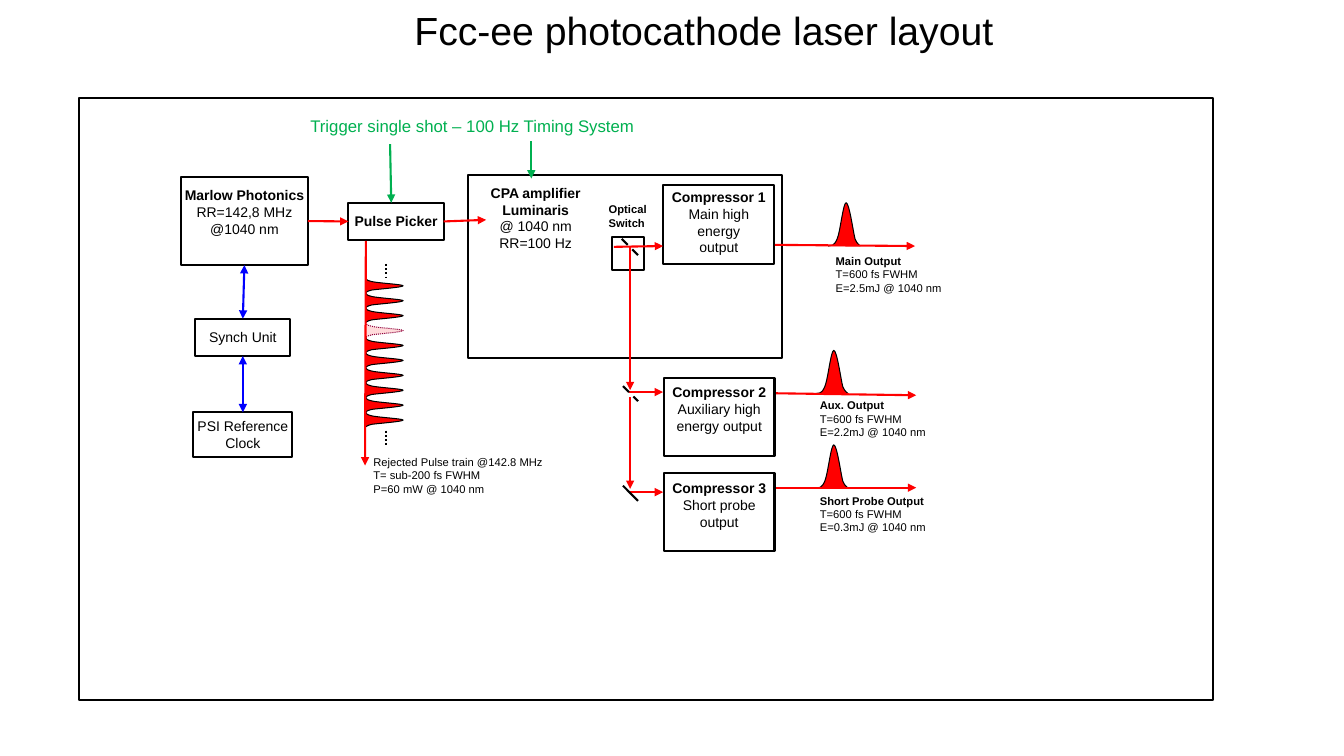
from dataclasses import dataclass
from lxml.etree import SubElement
from pptx import Presentation
from pptx.dml.color import RGBColor
from pptx.enum.dml import MSO_LINE
from pptx.enum.shapes import MSO_CONNECTOR, MSO_SHAPE
from pptx.enum.text import MSO_ANCHOR, MSO_AUTO_SIZE, PP_ALIGN
from pptx.oxml.ns import qn
from pptx.util import Cm, Pt


@dataclass(frozen=True)
class Theme:
    font: str = "Arial"
    black: RGBColor = RGBColor(0, 0, 0)
    red: RGBColor = RGBColor(255, 0, 0)
    blue: RGBColor = RGBColor(0, 0, 255)
    green: RGBColor = RGBColor(0, 0xB0, 0x50)
    plum: RGBColor = RGBColor(0x8F, 0, 0x3B)
    title: Pt = Pt(28)
    head: Pt = Pt(12)
    label: Pt = Pt(10)
    note: Pt = Pt(8)
    line: Pt = Pt(1.5)
    thin: Pt = Pt(0.75)


theme = Theme()
LEFT, MID = PP_ALIGN.LEFT, PP_ALIGN.CENTER


def write(frame, text, bold, size, color, align):
    """Fill a text frame line by line; the first `bold` lines are bold."""
    frame.word_wrap = True
    frame.auto_size = MSO_AUTO_SIZE.NONE
    frame.text = text
    for row, para in enumerate(frame.paragraphs):
        para.alignment = align
        font = para.font
        font.name, font.size, font.bold = theme.font, size, row < bold
        font.color.rgb = color


def bend(shape):
    """Turn each three straight segments of a freeform into one cubic curve."""
    steps = list(shape._element.spPr.iter(qn("a:lnTo")))
    for i in range(0, len(steps), 3):
        curve = SubElement(steps[i].getparent(), qn("a:cubicBezTo"))
        for step in steps[i:i + 3]:
            curve.append(step[0])
            step.getparent().remove(step)


deck = Presentation()
deck.slide_width, deck.slide_height = Cm(33.87), Cm(19.05)
slide = deck.slides.add_slide(deck.slide_layouts[5])
shapes = slide.shapes

title = shapes.title
title.left, title.top, title.width, title.height = Cm(10.19), Cm(0.03), Cm(15.29), Cm(1.45)
write(title.text_frame, "Fcc-ee photocathode laser layout", 0, theme.title, theme.black, LEFT)
title.text_frame.vertical_anchor = MSO_ANCHOR.TOP

# Boxes: name, left, top, width, height, text, bold lines, top inset (None centres)
boxes = {}
for name, x, y, w, h, text, bold, inset in (
    ("frame", 1.99, 2.46, 28.57, 15.19, "", 0, None),
    ("source", 4.56, 4.46, 3.2, 2.22, "Marlow Photonics\nRR=142,8 MHz\n@1040 nm", 1, 0.25),
    ("amp", 11.79, 4.42, 7.92, 4.6, "", 0, None),
    ("main", 16.72, 4.67, 2.79, 1.98, "Compressor 1\nMain high\nenergy\noutput", 1, 0.08),
    ("aux", 16.73, 9.52, 2.79, 1.98, "Compressor 2\nAuxiliary high\nenergy output", 1, 0.15),
    ("probe", 16.73, 11.91, 2.79, 1.98, "Compressor 3\nShort probe\noutput", 1, 0.18),
    ("synch", 4.92, 8.03, 2.4, 0.94, "Synch Unit", 0, None),
    ("clock", 4.87, 10.39, 2.5, 1.12, "PSI Reference Clock", 0, None),
    ("picker", 8.78, 5.11, 2.4, 0.94, "Pulse Picker", 1, None),
    ("switch", 15.42, 5.97, 0.82, 0.84, "", 0, None),
):
    box = shapes.add_shape(MSO_SHAPE.RECTANGLE, Cm(x), Cm(y), Cm(w), Cm(h))
    box.shadow.inherit = False
    box.fill.background()
    box.line.color.rgb, box.line.width = theme.black, theme.line
    if text:
        frame = box.text_frame
        write(frame, text, bold, theme.label, theme.black, MID)
        frame.margin_left = frame.margin_right = frame.margin_bottom = 0
        frame.margin_top = Cm(inset or 0)
        frame.vertical_anchor = MSO_ANCHOR.MIDDLE if inset is None else MSO_ANCHOR.TOP
    boxes[name] = box

# Free labels
for x, y, w, h, text, bold, size, color, align in (
    (9.32, 4.52, 8.36, 1.96, "CPA amplifier\nLuminaris\n@ 1040 nm\nRR=100 Hz", 2,
     theme.label, theme.black, MID),
    (15.09, 4.98, 1.55, 0.94, "Optical\nSwitch", 2, theme.note, theme.black, LEFT),
    (20.81, 6.28, 3.23, 1.3, "Main Output\nT=600 fs FWHM\nE=2.5mJ @ 1040 nm", 1,
     theme.note, theme.black, LEFT),
    (20.41, 9.92, 3.23, 1.3, "Aux. Output\nT=600 fs FWHM\nE=2.2mJ @ 1040 nm", 1,
     theme.note, theme.black, LEFT),
    (20.41, 12.32, 3.23, 1.3, "Short Probe Output\nT=600 fs FWHM\nE=0.3mJ @ 1040 nm", 1,
     theme.note, theme.black, LEFT),
    (9.16, 11.35, 5.23, 1.63,
     "Rejected Pulse train @142.8 MHz\nT= sub-200 fs FWHM\nP=60 mW @ 1040 nm", 0,
     theme.note, theme.black, LEFT),
    (7.57, 2.79, 8.74, 0.76, "Trigger single shot – 100 Hz Timing System", 0,
     theme.head, theme.green, LEFT),
):
    label = shapes.add_textbox(Cm(x), Cm(y), Cm(w), Cm(h))
    write(label.text_frame, text, bold, size, color, align)

# Pulses: three upright at the outputs, ten lying on the rejected beam
pulse = ((0, 0), (0.1, 0), (0.19, 0), (0.28, 0.16), (0.38, 0.33), (0.47, 1), (0.56, 1),
         (0.66, 1), (0.78, 0.33), (0.84, 0.16), (0.94, 0), (0.97, 0.05), (1, 0))
outlines = [[(x + 0.81 * u, y - 1.09 * v) for u, v in pulse]
            for x, y in ((20.87, 6.2), (20.56, 9.92), (20.56, 12.3))]
outlines += [[(9.22 + 0.94 * v, 6.99 + 0.376 * n + 0.38 * u) for u, v in pulse]
             for n in range(10)]
picked = 6
for i, outline in enumerate(outlines):
    dots = [(Cm(x), Cm(y)) for x, y in outline]
    maker = shapes.build_freeform(*dots[0], scale=1.0)
    maker.add_line_segments(dots[1:], close=False)
    peak = maker.convert_to_shape()
    bend(peak)
    peak.shadow.inherit = False
    peak.fill.solid()
    peak.fill.fore_color.rgb = theme.red
    peak.line.color.rgb, peak.line.width = theme.black, theme.thin
    if i == picked:
        peak.line.color.rgb = theme.plum
        peak.line.dash_style = MSO_LINE.ROUND_DOT
        tint = peak._element.spPr.find(qn("a:solidFill"))[0]
        SubElement(tint, qn("a:alpha"), val="14000")

# Lines: colour, arrowheads, dash, ends, then the joined box and side at each end
DASH, DOT = MSO_LINE.DASH, MSO_LINE.ROUND_DOT
for color, heads, dash, ends, *joins in (
    (theme.red, 1, None, (7.76, 5.57, 8.78, 5.58), ("source", 3), ("picker", 1)),
    (theme.red, 1, None, (11.18, 5.58, 12.25, 5.54), ("picker", 3)),
    (theme.blue, 2, None, (6.12, 8.03, 6.16, 6.68), ("synch", 0), ("source", 2)),
    (theme.blue, 2, None, (6.12, 10.39, 6.12, 8.97), ("clock", 0), ("synch", 2)),
    (theme.red, 1, None, (9.22, 6.07, 9.2, 11.73)),
    (theme.red, 1, None, (15.47, 6.22, 16.71, 6.2)),
    (theme.red, 1, None, (15.88, 6.22, 15.88, 9.83)),
    (theme.red, 1, None, (15.88, 10.01, 15.88, 12.32)),
    (theme.red, 1, None, (15.85, 9.88, 16.71, 9.88)),
    (theme.red, 1, None, (15.85, 12.4, 16.71, 12.4)),
    (theme.red, 1, None, (19.53, 6.17, 23.06, 6.2)),
    (theme.red, 1, None, (19.56, 9.91, 23.09, 9.96)),
    (theme.red, 1, None, (19.56, 12.29, 23.09, 12.29)),
    (theme.green, 1, None, (9.83, 3.63, 9.86, 5.11)),
    (theme.green, 1, None, (13.39, 3.56, 13.39, 4.5)),
    (theme.black, 0, DASH, (15.67, 6.02, 16.08, 6.43)),
    (theme.black, 0, DASH, (15.7, 9.73, 16.08, 10.11)),
    (theme.black, 0, None, (15.7, 12.24, 16.08, 12.62)),
    (theme.black, 0, DOT, (9.73, 6.65, 9.73, 7.01)),
    (theme.black, 0, DOT, (9.73, 10.85, 9.73, 11.23)),
):
    link = shapes.add_connector(MSO_CONNECTOR.STRAIGHT, *map(Cm, ends))
    for join, (name, side) in zip((link.begin_connect, link.end_connect), joins):
        join(boxes[name], side)
    link.line.color.rgb, link.line.width = color, theme.line
    if dash:
        link.line.dash_style = dash
    props = link._element.spPr
    for tag in ("a:headEnd", "a:tailEnd")[2 - heads:]:
        SubElement(props.find(qn("a:ln")), qn(tag), type="triangle")
    SubElement(props, qn("a:effectLst"))

deck.save("out.pptx")
